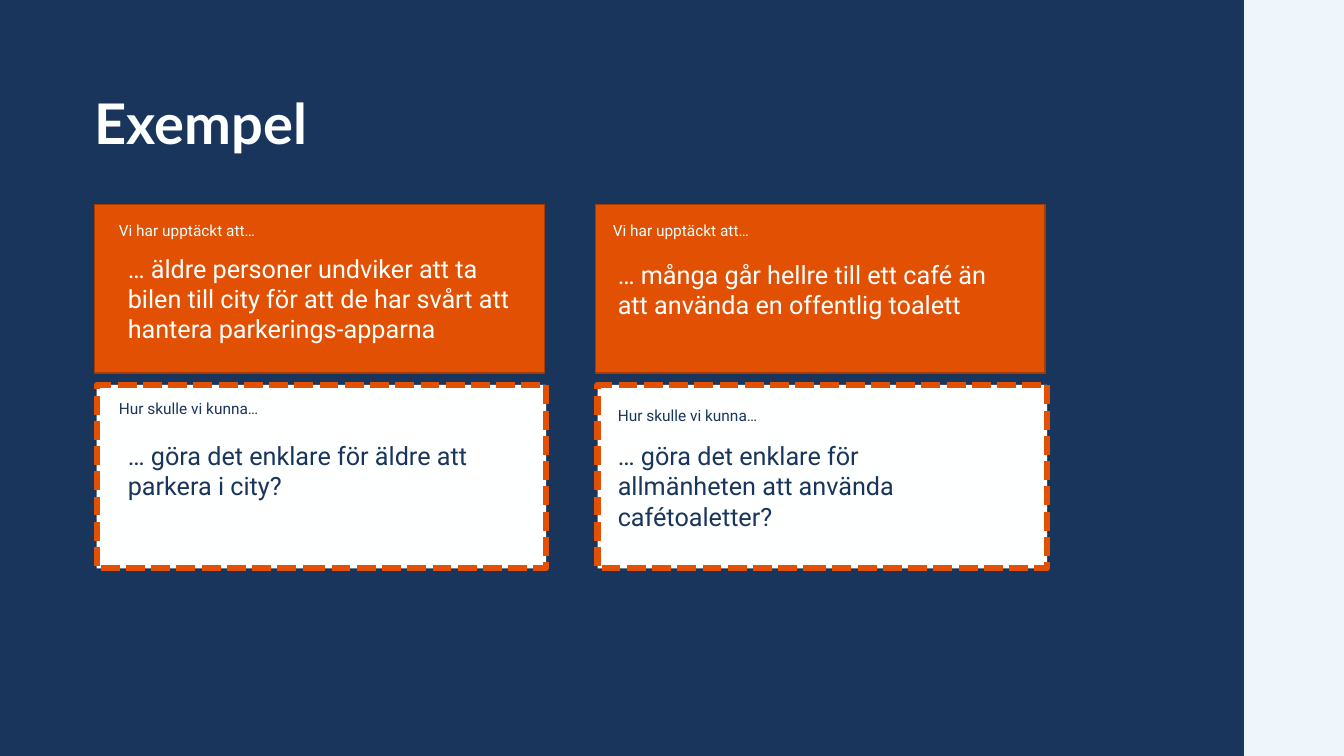
import pptx
import pptx.dml.color
import pptx.enum.dml
import pptx.enum.shapes
import pptx.enum.text
import pptx.util

Pt = pptx.util.Pt
RGBColor = pptx.dml.color.RGBColor

NAVY = RGBColor(0x1A, 0x35, 0x5C)
PALE_BLUE = RGBColor(0xEE, 0xF5, 0xFB)
ORANGE = RGBColor(0xE2, 0x51, 0x03)
DARK_ORANGE = RGBColor(0xA7, 0x3C, 0x02)
WHITE = RGBColor(0xFE, 0xFF, 0xFF)
ICE = RGBColor(0xE5, 0xFF, 0xFF)

deck = pptx.Presentation()
deck.slide_width = Pt(960)
deck.slide_height = Pt(540)
page = deck.slides.add_slide(deck.slide_layouts[6])
page.background.fill.solid()
page.background.fill.fore_color.rgb = PALE_BLUE


def add_panel(left, top, width, height, color):
    panel = page.shapes.add_shape(
        pptx.enum.shapes.MSO_SHAPE.RECTANGLE, Pt(left), Pt(top), Pt(width), Pt(height)
    )
    panel.shadow.inherit = False
    panel.fill.solid()
    panel.fill.fore_color.rgb = color
    panel.line.fill.background()
    return panel


def add_text(left, top, width, height, text, size, color, name="Roboto"):
    box = page.shapes.add_textbox(Pt(left), Pt(top), Pt(width), Pt(height))
    box.text_frame.word_wrap = True
    span = box.text_frame.paragraphs[0].add_run()
    span.text = text
    span.font.name = name
    span.font.size = Pt(size)
    span.font.color.rgb = color
    return box


add_panel(0, 0, 888.5, 540, NAVY)

title = add_text(67.7, 67.7, 753.8, 43.9, "Exempel", 40, WHITE, "Lato")
frame = title.text_frame
frame.margin_left = frame.margin_right = frame.margin_top = frame.margin_bottom = 0
frame.vertical_anchor = pptx.enum.text.MSO_ANCHOR.BOTTOM
frame.paragraphs[0].line_spacing = 0.9
frame.paragraphs[0].runs[0].font.bold = True

CARD_WIDTH = 321.1
COLUMN_STEP = 357.8

for column in range(2):
    shift = column * COLUMN_STEP
    insight = add_panel(67.7 + shift, 146.2, CARD_WIDTH, 120.2, ORANGE)
    insight.line.color.rgb = DARK_ORANGE
    insight.line.width = Pt(1)
    question = add_panel(69.1 + shift, 275, CARD_WIDTH, 131, WHITE)
    question.line.color.rgb = ORANGE
    question.line.width = Pt(4.5)
    question.line.dash_style = pptx.enum.dml.MSO_LINE.SQUARE_DOT

INSIGHT_LABEL = "Vi har upptäckt att…"
QUESTION_LABEL = "Hur skulle vi kunna…"
labels = [
    (77.8, 154.1, INSIGHT_LABEL, ICE),
    (430.6, 154.1, INSIGHT_LABEL, ICE),
    (77.8, 281.5, QUESTION_LABEL, NAVY),
    (434.2, 286.6, QUESTION_LABEL, NAVY),
]
for left, top, text, color in labels:
    add_text(left, top, 272.9, 20.9, text, 11, color)

statements = [
    (84.2, 177.1, 72.7, WHITE,
     "… äldre personer undviker att ta bilen till city för att de har svårt att "
     "hantera parkerings-apparna"),
    (434.2, 181.4, 51.1, WHITE,
     "… många går hellre till ett café än att använda en offentlig toalett"),
    (84.2, 311, 51.1, NAVY, "… göra det enklare för äldre att parkera i city?"),
    (434.2, 311, 51.1, NAVY,
     "… göra det enklare för allmänheten att använda cafétoaletter?"),
]
for left, top, height, color, text in statements:
    add_text(left, top, 289.4, height, text, 18, color)

deck.save("out.pptx")
